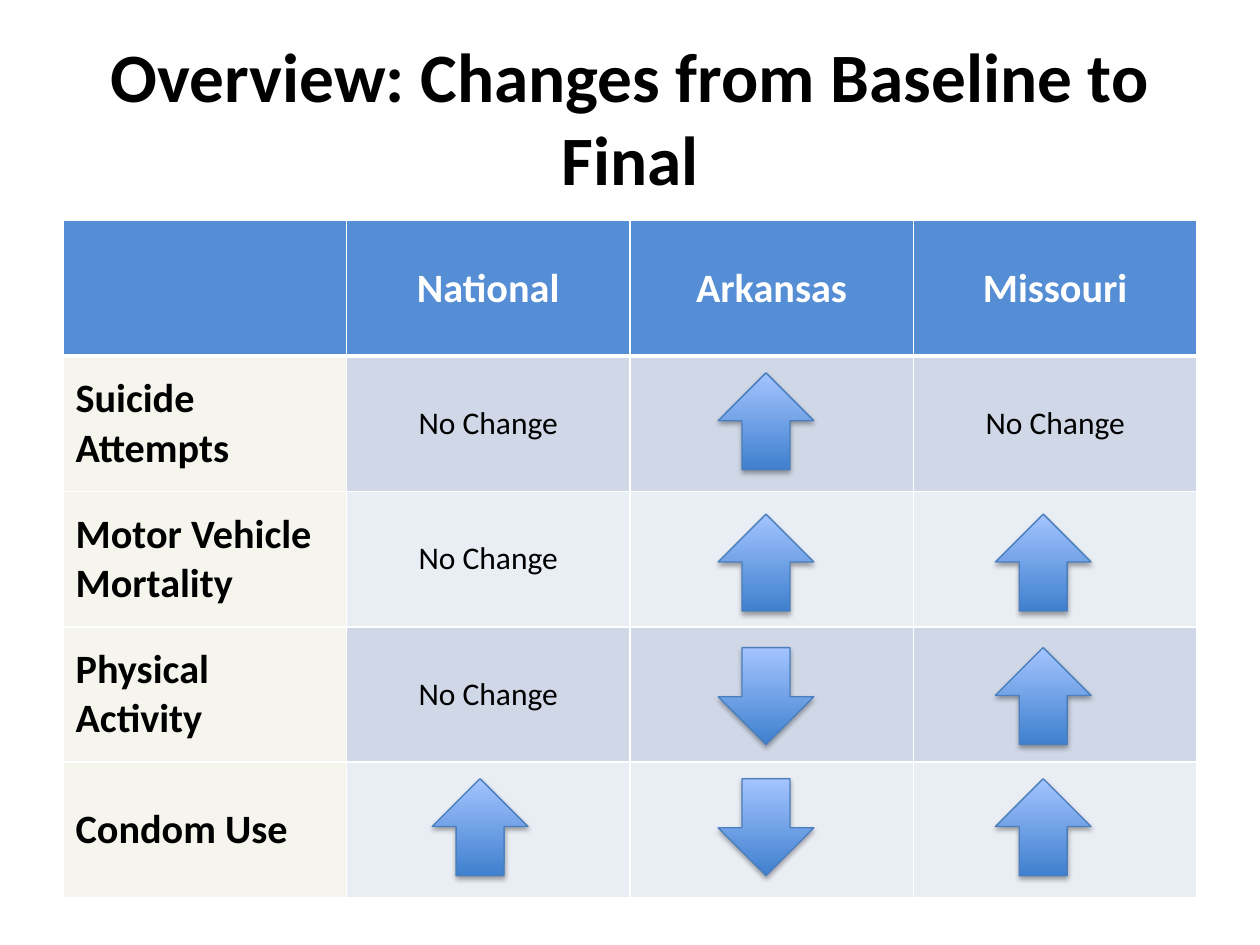
from lxml import etree
from pptx import Presentation
from pptx.dml.color import RGBColor
from pptx.enum.shapes import MSO_SHAPE
from pptx.enum.text import MSO_ANCHOR, MSO_AUTO_SIZE, PP_ALIGN
from pptx.oxml.ns import qn
from pptx.util import Pt

UP, DOWN = MSO_SHAPE.UP_ARROW, MSO_SHAPE.DOWN_ARROW
MIDDLE = MSO_ANCHOR.MIDDLE
LEFT, CENTER = PP_ALIGN.LEFT, PP_ALIGN.CENTER
TITLE_ONLY = 5

COLORS = {
    "text": "000000", "white": "FFFFFF", "header": "558ED5", "label": "F5F4ED",
    "band_dark": "D0D8E8", "band_light": "E9EDF4", "arrow_dark": "3F80CE",
    "arrow_light": "A4C4FF", "arrow_line": "4B7EBC", "shadow": "000000",
}

TITLE = "Overview: Changes from Baseline to Final"
HEADINGS = ["", "National", "Arkansas", "Missouri"]
SAME = "No Change"
CHANGES = [
    ("Suicide Attempts", SAME, UP, SAME),
    ("Motor Vehicle Mortality", SAME, UP, UP),
    ("Physical Activity", SAME, DOWN, UP),
    ("Condom Use", UP, DOWN, UP),
]

# Lengths in points
TABLE_LEFT, TABLE_TOP, COLUMN_WIDTH, ROW_HEIGHT = 36, 126, 162, 77.4
ARROW_WIDTH, ARROW_HEIGHT = 54.7, 55.4
ARROW_LEFTS = [247, 410.4, 568.8]
ARROW_TOPS = [213.1, 293.8, 370.1, 445]

# Text formats
TITLE_FONT = {"name": "Calibri", "size": Pt(39.6), "bold": True}
HEADING_FONT = {"name": "Calibri", "size": Pt(23), "bold": True}
VALUE_FONT = {"name": "Calibri", "size": Pt(18), "bold": False}


def rgb(name):
    return RGBColor.from_string(COLORS[name])


def write_text(frame, text, font_format, color, align):
    paragraph = frame.paragraphs[0]
    paragraph.alignment = align
    run = paragraph.add_run()
    run.text = text
    for attribute, value in font_format.items():
        setattr(run.font, attribute, value)
    run.font.color.rgb = rgb(color)


def add_title(slide):
    title = slide.shapes.title
    place = {"left": Pt(36), "top": Pt(21.6), "width": Pt(648), "height": Pt(90)}
    for attribute, value in place.items():
        setattr(title, attribute, value)
    frame = title.text_frame
    frame.auto_size = MSO_AUTO_SIZE.NONE
    frame.vertical_anchor = MIDDLE
    write_text(frame, TITLE, TITLE_FONT, "text", CENTER)


def set_borders(cell, widths):
    properties = cell._tc.get_or_add_tcPr()
    for side, width in widths.items():
        line = etree.SubElement(properties, qn(f"a:ln{side}"), w=str(Pt(width)))
        fill = etree.SubElement(line, qn("a:solidFill"))
        etree.SubElement(fill, qn("a:srgbClr"), val=COLORS["white"])


def fill_cell(cell, text, fill, font_format, color, align, top=1, bottom=1):
    set_borders(cell, {"L": 1, "R": 1, "T": top, "B": bottom})
    cell.fill.solid()
    cell.fill.fore_color.rgb = rgb(fill)
    cell.vertical_anchor = MIDDLE
    if text:
        write_text(cell.text_frame, text, font_format, color, align)


def add_changes_table(slide):
    row_count, column_count = len(CHANGES) + 1, len(HEADINGS)
    table = slide.shapes.add_table(
        row_count, column_count, Pt(TABLE_LEFT), Pt(TABLE_TOP),
        Pt(COLUMN_WIDTH * column_count), Pt(ROW_HEIGHT * row_count)).table

    for column, heading in enumerate(HEADINGS):
        fill_cell(table.cell(0, column), heading, "header", HEADING_FONT,
                  "white", CENTER, bottom=3)

    for row, (topic, *results) in enumerate(CHANGES, start=1):
        top = 3 if row == 1 else 1
        fill_cell(table.cell(row, 0), topic, "label", HEADING_FONT, "text", LEFT, top)
        band = "band_dark" if row % 2 else "band_light"
        for column, result in enumerate(results, start=1):
            text = SAME if result == SAME else ""
            fill_cell(table.cell(row, column), text, band, VALUE_FONT, "text", CENTER, top)


def add_shadow(shape):
    shape.shadow.inherit = False
    effects = shape._element.spPr.find(qn("a:effectLst"))
    shadow = etree.SubElement(
        effects, qn("a:outerShdw"), blurRad=str(Pt(3.1)), dist=str(Pt(1.8)),
        dir="5400000", rotWithShape="0")
    color = etree.SubElement(shadow, qn("a:srgbClr"), val=COLORS["shadow"])
    etree.SubElement(color, qn("a:alpha"), val="35000")


def add_arrow(slide, direction, left, top):
    arrow = slide.shapes.add_shape(
        direction, Pt(left), Pt(top), Pt(ARROW_WIDTH), Pt(ARROW_HEIGHT))
    arrow.fill.gradient()
    arrow.fill.gradient_angle = 90
    for stop, color in zip(arrow.fill.gradient_stops, ("arrow_dark", "arrow_light")):
        stop.color.rgb = rgb(color)
    arrow.line.color.rgb = rgb("arrow_line")
    arrow.line.width = Pt(0.75)
    add_shadow(arrow)


def add_change_arrows(slide):
    for (_, *results), top in zip(CHANGES, ARROW_TOPS):
        for result, left in zip(results, ARROW_LEFTS):
            if result != SAME:
                add_arrow(slide, result, left, top)


def main():
    presentation = Presentation()
    presentation.slide_width, presentation.slide_height = Pt(720), Pt(540)
    slide = presentation.slides.add_slide(presentation.slide_layouts[TITLE_ONLY])
    add_title(slide)
    add_changes_table(slide)
    add_change_arrows(slide)
    presentation.save("out.pptx")


if __name__ == "__main__":
    main()
